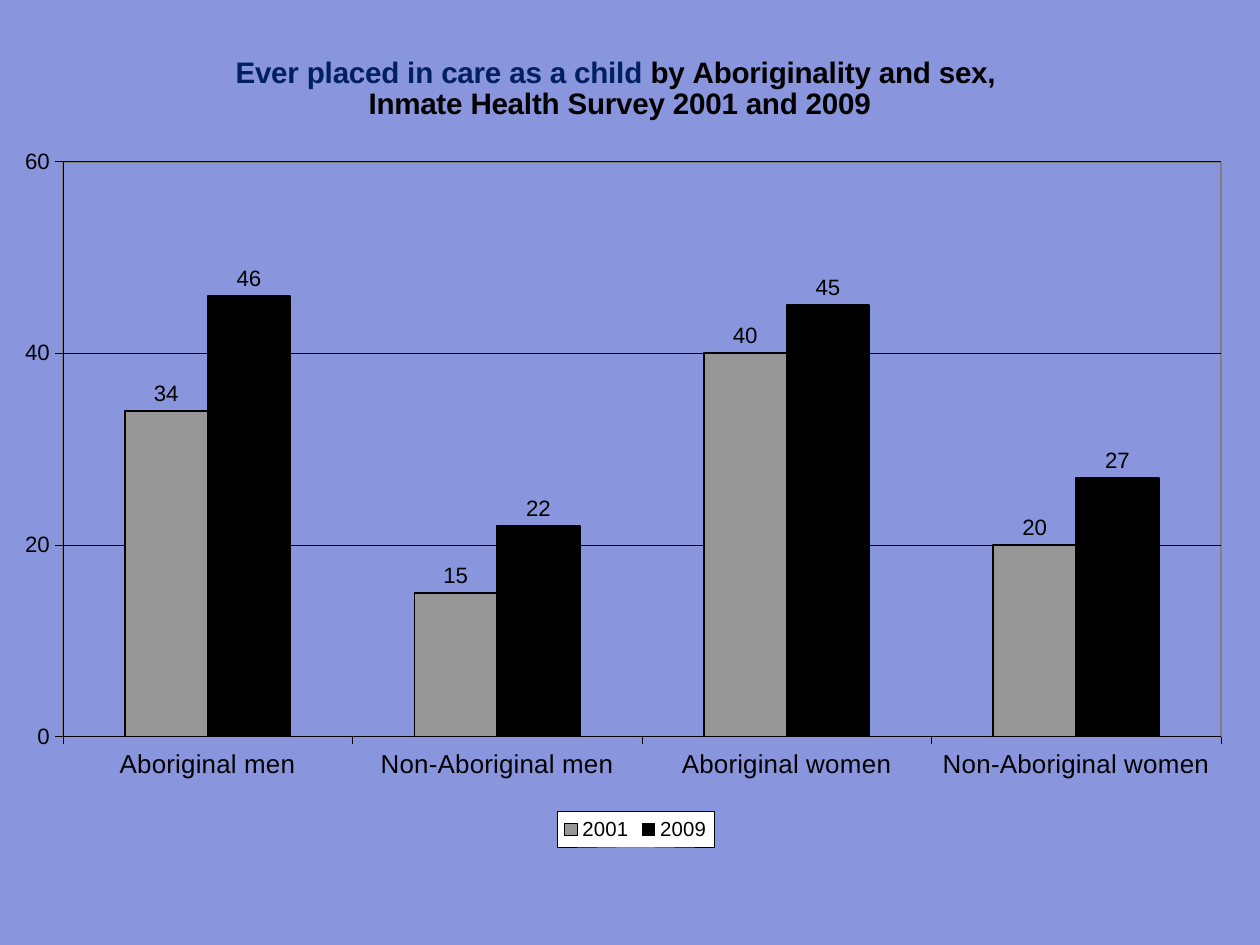
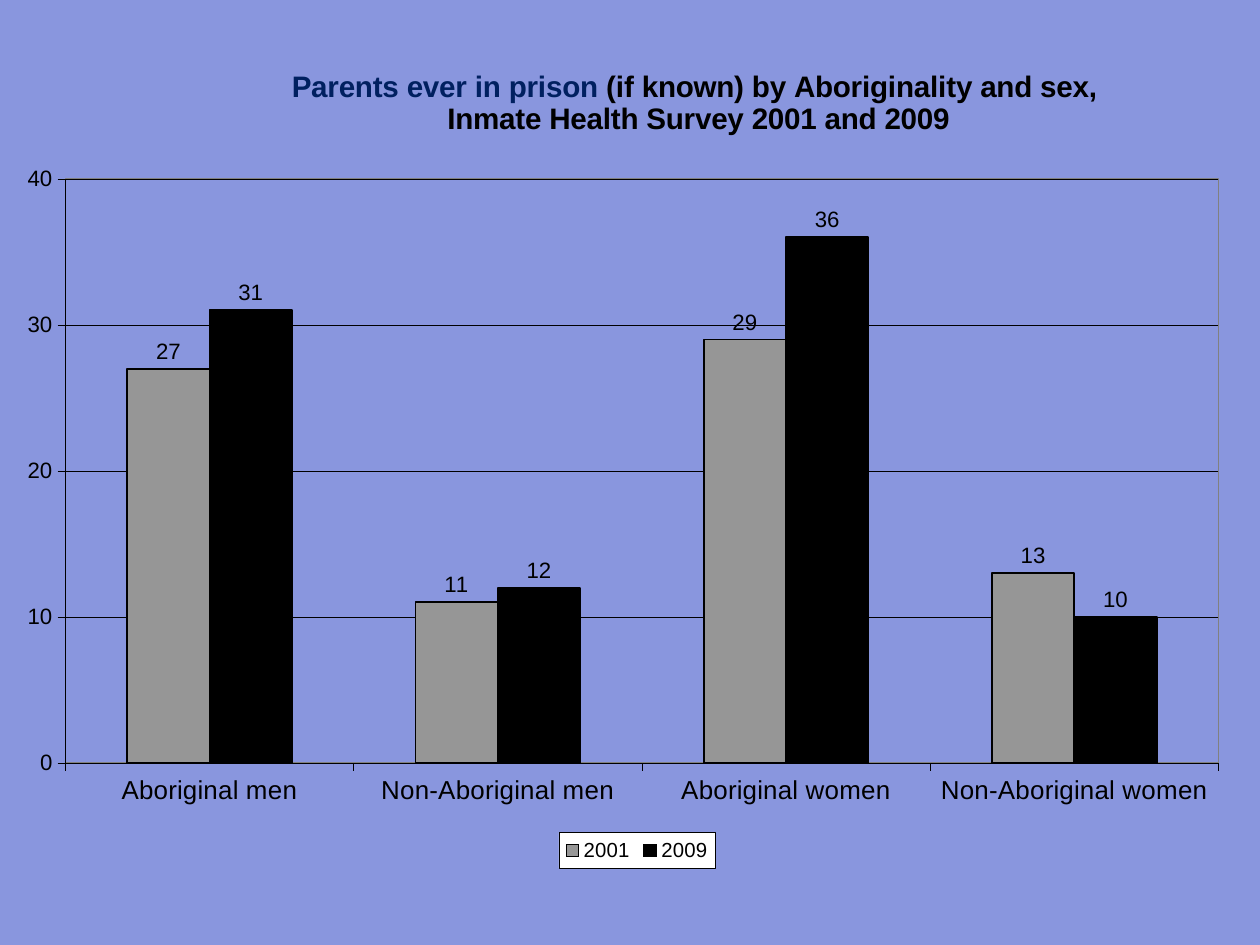
from pptx import Presentation
from pptx.chart.data import CategoryChartData as ChartData
from pptx.dml.color import RGBColor
from pptx.enum.chart import XL_CHART_TYPE as ChartType
from pptx.enum.chart import XL_LABEL_POSITION as LabelPosition
from pptx.enum.chart import XL_LEGEND_POSITION as LegendPosition
from pptx.enum.chart import XL_TICK_MARK as TickMark
from pptx.oxml import parse_xml
from pptx.oxml.ns import nsdecls
from pptx.util import Pt

BACKGROUND = RGBColor(0x89, 0x96, 0xDE)
NAVY = RGBColor(0x00, 0x20, 0x60)
BLACK = RGBColor(0x00, 0x00, 0x00)
GREY = RGBColor(0x96, 0x96, 0x96)
BORDER_GREY = RGBColor(0x80, 0x80, 0x80)
WHITE = RGBColor(0xFF, 0xFF, 0xFF)

CATEGORIES = ["Aboriginal men", "Non-Aboriginal men", "Aboriginal women", "Non-Aboriginal women"]
SERIES_COLORS = {"2001": GREY, "2009": BLACK}
SURVEY = "Inmate Health Survey 2001 and 2009"
LEGEND_LAYOUT = {"x": 0.44, "y": 0.956, "w": 0.125, "h": 0.043}

TITLE_FORMAT = {"size": Pt(16), "bold": True, "name": "Arial"}
TEXT_FORMAT = {"size": Pt(12), "bold": False, "name": "Arial"}
CATEGORY_FORMAT = {**TEXT_FORMAT, "size": Pt(14)}
LEGEND_FORMAT = {**TEXT_FORMAT, "size": Pt(11)}
AXIS_FORMAT = {"major_tick_mark": TickMark.OUTSIDE, "minor_tick_mark": TickMark.NONE}
LABEL_FORMAT = {"show_value": True, "position": LabelPosition.OUTSIDE_END}

SLIDES = [
    {
        "topic": "Ever placed in care as a child",
        "rest": " by Aboriginality and sex, ",
        "frame": (4.3, 17.3, 674.6, 440.6),
        "title": {"x": 0.179, "y": 0.022},
        "plot": {"x": 0.044, "y": 0.159, "w": 0.927, "h": 0.705},
        "scale": {"minimum_scale": 0, "maximum_scale": 60, "major_unit": 20},
        "values": {"2001": (34, 15, 40, 20), "2009": (46, 22, 45, 27)},
    },
    {
        "topic": "Parents ever in prison",
        "rest": " (if known) by Aboriginality and sex, ",
        "frame": (5, 23, 674.6, 446.4),
        "title": {"x": 0.223, "y": 0.026},
        "plot": {"x": 0.045, "y": 0.165, "w": 0.923, "h": 0.707},
        "scale": {"minimum_scale": 0, "maximum_scale": 40, "major_unit": 10},
        "values": {"2001": (27, 11, 29, 13), "2009": (31, 12, 36, 10)},
    },
]


def set_format(target, values, color=None):
    for name, value in values.items():
        setattr(target, name, value)
    if color is not None:
        target.color.rgb = color


def set_layout(parent, index, values, inner=False):
    for layout in parent.xpath("c:layout"):
        parent.remove(layout)
    tags = '<c:layoutTarget val="inner"/>' if inner else ""
    tags += "".join(f'<c:{name}Mode val="edge"/>' for name in "xy")
    tags += "".join(f'<c:{name} val="{value}"/>' for name, value in values.items())
    parent.insert(index, parse_xml(
        f'<c:layout {nsdecls("c")}><c:manualLayout>{tags}</c:manualLayout></c:layout>'))


presentation = Presentation()
presentation.slide_width = Pt(680.4)
presentation.slide_height = Pt(510.48)

for content in SLIDES:
    slide = presentation.slides.add_slide(presentation.slide_layouts[6])
    slide.background.fill.solid()
    slide.background.fill.fore_color.rgb = BACKGROUND

    chart_data = ChartData()
    chart_data.categories = CATEGORIES
    for year, values in content["values"].items():
        chart_data.add_series(year, values)
    frame = [Pt(length) for length in content["frame"]]
    chart = slide.shapes.add_chart(ChartType.COLUMN_CLUSTERED, *frame, chart_data).chart
    set_format(chart.font, TEXT_FORMAT, BLACK)

    chart.has_title = True
    heading = chart.chart_title.text_frame
    first_line, second_line = heading.paragraphs[0], heading.add_paragraph()
    for paragraph, text, color in (
        (first_line, content["topic"], NAVY),
        (first_line, content["rest"], BLACK),
        (second_line, SURVEY, BLACK),
    ):
        run = paragraph.add_run()
        run.text = text
        set_format(run.font, TITLE_FORMAT, color)

    for axis, font_format in (
        (chart.category_axis, CATEGORY_FORMAT),
        (chart.value_axis, TEXT_FORMAT),
    ):
        set_format(axis, AXIS_FORMAT)
        set_format(axis.tick_labels.font, font_format, BLACK)
        set_format(axis.format.line, {"width": Pt(0.25)}, BLACK)
    set_format(chart.value_axis, content["scale"])
    chart.value_axis.has_major_gridlines = True
    set_format(chart.value_axis.major_gridlines.format.line, {"width": Pt(0.25)}, BLACK)

    plot = chart.plots[0]
    set_format(plot, {"gap_width": 150, "overlap": 0, "vary_by_categories": False})
    for series in plot.series:
        series.format.fill.solid()
        series.format.fill.fore_color.rgb = SERIES_COLORS[series.name]
        set_format(series.format.line, {"width": Pt(1)}, BLACK)
        set_format(series.data_labels, LABEL_FORMAT)
        set_format(series.data_labels.font, TEXT_FORMAT, BLACK)

    chart.has_legend = True
    set_format(chart.legend, {"position": LegendPosition.BOTTOM, "include_in_layout": False})
    set_format(chart.legend.font, LEGEND_FORMAT, BLACK)

    title_part, plot_part, legend_part = (
        chart.element.xpath(f"c:chart/c:{name}")[0] for name in ("title", "plotArea", "legend"))
    set_layout(title_part, 1, content["title"])
    set_layout(plot_part, 0, content["plot"], inner=True)
    set_layout(legend_part, 1, LEGEND_LAYOUT)

    plot_box, legend_box = (
        parse_xml(
            f'<c:spPr {nsdecls("c", "a")}>{fill}<a:ln w="{Pt(width)}"><a:solidFill>'
            f'<a:srgbClr val="{color}"/></a:solidFill></a:ln></c:spPr>')
        for fill, width, color in (
            ("<a:noFill/>", 1, BORDER_GREY),
            (f'<a:solidFill><a:srgbClr val="{WHITE}"/></a:solidFill>', 0.25, BLACK),
        ))
    plot_part.append(plot_box)
    legend_part.xpath("c:txPr")[0].addprevious(legend_box)

presentation.save("out.pptx")
